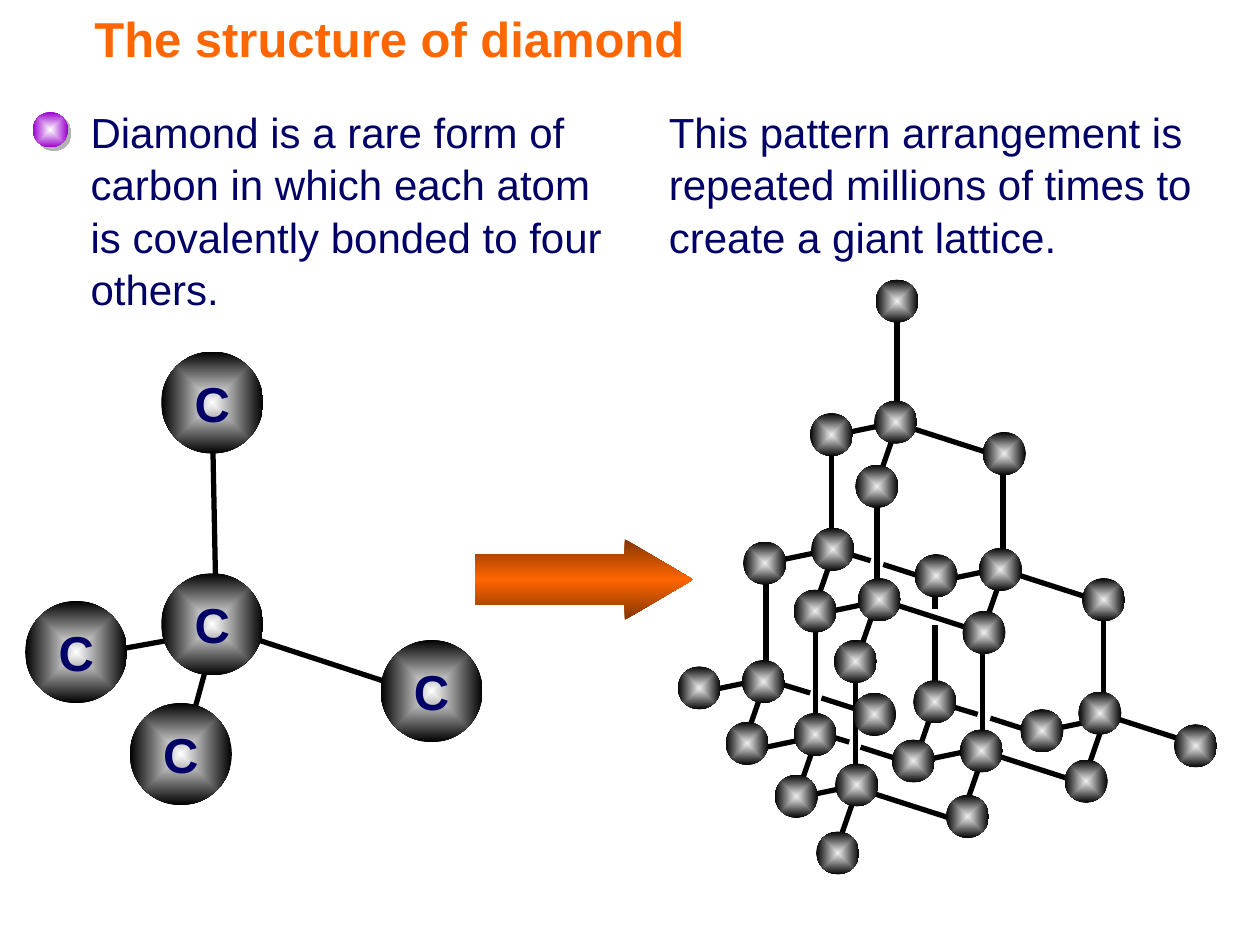
from lxml import etree
from pptx import Presentation
from pptx import util as u
from pptx.dml.color import RGBColor
from pptx.enum import shapes, text
from pptx.oxml.ns import qn

THEME = {
    "font": "Arial", "title_size": 28, "body_size": 24, "atom_size": 28,
    "title": "FF6600", "body": "010066", "bond": "000000", "shadow": "B2B2B2",
    "bullet_fill": ("FFFFFF", "9900CC"),
    "atom_fill": ("FFFFFF", "000000"),
    "lattice_fill": ("EFEFEF", "000000"),
    "arrow_fill": ("823400", "FF6600", "823400"),
}

# Content: wording as (text, box)
TITLE = ("The structure of diamond", (0, 0, 7.13, 0.6))
BODY = [
    ("Diamond is a rare form of carbon in which each atom is covalently "
     "bonded to four others.", (0.62, 0.78, 4.38, 1.7)),
    ("This pattern arrangement is repeated millions of times to create a "
     "giant lattice.", (5.21, 0.78, 4.79, 1.3)),
]

# Single unit: bonds as (start, end), atoms as (left, top)
UNIT_ATOM, UNIT_SYMBOL = 0.81, "C"
UNIT_BONDS = [((1.69, 3.56), (1.71, 4.57)), ((2.02, 5.07), (3.09, 5.42)),
              ((1.35, 5.08), (0.96, 5.15)), ((1.63, 5.32), (1.54, 5.65))]
UNIT_ATOMS = [(1.28, 2.79), (1.03, 5.58), (0.2, 4.77), (1.28, 4.55), (3.02, 5.08)]

# Lattice: each bond direction is (dx, dy) with the start points that share it
LATTICE_ATOM, LATTICE_TILT = 0.34, 358.9
LATTICE_BONDS = [
    ((0, 0.66), [(7.12, 2.55), (6.6, 3.6), (7.96, 3.76), (6.96, 4.02), (6.08, 4.62),
                 (6.47, 5.02), (6.79, 5.42), (7.8, 5.17), (8.76, 4.92)]),
    ((0.24, -0.05), [(6.74, 3.43), (6.22, 4.44), (6.6, 4.85), (5.68, 5.47), (7.4, 6.02),
                     (8.39, 5.78), (6.43, 6.31), (6.08, 5.93), (7.56, 4.59)]),
    ((0.08, -0.23), [(7, 3.72), (6.5, 4.72), (7.84, 4.89), (5.95, 5.77), (6.36, 6.21),
                     (6.68, 6.62), (7.69, 6.32), (8.65, 6.05), (7.3, 5.93), (6.84, 5.12)]),
    ((0.59, 0.19), [(7.24, 3.4), (8.07, 4.56), (7.11, 4.8), (6.94, 6.3), (7.92, 6),
                    (8.85, 5.7)]),
    # Bonds that pass behind another are drawn in two pieces
    ((0.23, 0.07), [(6.2, 5.43), (6.68, 4.38), (7.53, 5.6), (6.51, 5.82)]),
    ((0.28, 0.09), [(6.52, 5.54), (7.01, 4.48), (7.86, 5.7), (6.83, 5.93)]),
    ((0, 0.14), [(7.42, 4.69)]),
    ((0, 0.47), [(7.42, 4.96)]),
]
LATTICE_ATOMS = [
    (6.95, 2.22), (5.9, 4.3), (6.44, 4.19), (6.79, 3.69), (6.43, 3.28), (7.26, 4.4),
    (7.8, 3.43), (6.94, 3.18), (7.77, 4.35), (8.59, 4.59), (8.45, 6.03), (8.56, 5.49),
    (9.32, 5.75), (6.81, 4.59), (6.3, 4.68), (5.38, 5.29), (5.89, 5.24), (6.15, 6.15),
    (6.63, 6.06), (7.25, 5.4), (7.08, 5.87), (7.51, 6.31), (8.1, 5.63), (6.62, 5.08),
    (5.76, 5.73), (6.3, 5.66), (6.77, 5.5), (7.62, 5.79), (7.64, 4.85), (6.48, 6.6),
]


def inches(values):
    return [u.Inches(v) for v in values]


def write(frame, words, *, size, color, bold=False, wrap=True, inset=0.1,
          align=text.PP_ALIGN.LEFT, anchor=text.MSO_ANCHOR.TOP, spacing=1.0):
    frame.word_wrap = wrap
    frame.margin_left = u.Inches(inset)
    frame.vertical_anchor = anchor
    paragraph = frame.paragraphs[0]
    paragraph.alignment = align
    paragraph.line_spacing = spacing
    run = paragraph.add_run()
    run.text = words
    run.font.name, run.font.size, run.font.bold = THEME["font"], u.Pt(size), bold
    run.font.color.rgb = RGBColor.from_string(color)


def add_color(parent, color):
    etree.SubElement(parent, qn("a:srgbClr"), val=color)


def shade(shape, colors, from_centre=True):
    """Fill a shape with evenly spaced gradient stops."""
    shape.fill.background()
    gradient = etree.Element(qn("a:gradFill"), rotWithShape="1")
    stops = etree.SubElement(gradient, qn("a:gsLst"))
    for i, color in enumerate(colors):
        position = str(100000 * i // (len(colors) - 1))
        add_color(etree.SubElement(stops, qn("a:gs"), pos=position), color)
    if from_centre:
        path = etree.SubElement(gradient, qn("a:path"), path="shape")
        etree.SubElement(path, qn("a:fillToRect"),
                         {side: "50000" for side in "ltrb"})
    else:
        etree.SubElement(gradient, qn("a:lin"), ang="5400000", scaled="1")
    properties = shape._element.spPr
    properties.replace(properties.find(qn("a:noFill")), gradient)


def add_shaded(parent, kind, box, colors, from_centre=True):
    shape = parent.add_shape(kind, *inches(box))
    shape.shadow.inherit = False
    shape.line.fill.background()
    shade(shape, colors, from_centre)
    return shape


def add_ball(parent, corner, size, colors):
    return add_shaded(parent, shapes.MSO_SHAPE.OVAL, (*corner, size, size), colors)


def add_bond(parent, start, end):
    bond = parent.add_connector(shapes.MSO_CONNECTOR.STRAIGHT, *inches((*start, *end)))
    bond.line.color.rgb = RGBColor.from_string(THEME["bond"])
    bond.line.width = u.Pt(3)
    etree.SubElement(bond._element.spPr, qn("a:effectLst"))


def main():
    deck = Presentation()
    deck.slide_width, deck.slide_height = u.Inches(10), u.Inches(7.5)
    canvas = deck.slides.add_slide(deck.slide_layouts[6]).shapes

    # Title
    words, box = TITLE
    write(canvas.add_textbox(*inches(box)).text_frame, words, size=THEME["title_size"],
          color=THEME["title"], bold=True, inset=0.75, anchor=text.MSO_ANCHOR.MIDDLE)

    # Bullet ball with its shadow
    bullet = add_ball(canvas, (0.26, 0.89), 0.28, THEME["bullet_fill"])
    effects = bullet._element.spPr.find(qn("a:effectLst"))
    add_color(etree.SubElement(effects, qn("a:outerShdw"), dist=str(u.Pt(2.8)),
                               dir="2700000", algn="ctr", rotWithShape="0"),
              THEME["shadow"])

    # Body text
    for words, box in BODY:
        write(canvas.add_textbox(*inches(box)).text_frame, words,
              size=THEME["body_size"], color=THEME["body"], spacing=1.04)

    # Arrow from unit to lattice
    arrow = add_shaded(canvas, shapes.MSO_SHAPE.RIGHT_ARROW, (3.77, 4.28, 1.73, 0.64),
                       THEME["arrow_fill"], from_centre=False)
    arrow.adjustments[0], arrow.adjustments[1] = 0.628, 0.844

    # Single unit
    unit = canvas.add_group_shape().shapes
    for start, end in UNIT_BONDS:
        add_bond(unit, start, end)
    for corner in UNIT_ATOMS:
        atom = add_ball(unit, corner, UNIT_ATOM, THEME["atom_fill"])
        write(atom.text_frame, UNIT_SYMBOL, size=THEME["atom_size"], color=THEME["body"],
              bold=True, wrap=False, align=text.PP_ALIGN.CENTER,
              anchor=text.MSO_ANCHOR.MIDDLE)

    # Giant lattice
    lattice = canvas.add_group_shape().shapes
    for (dx, dy), starts in LATTICE_BONDS:
        for x, y in starts:
            add_bond(lattice, (x, y), (x + dx, y + dy))
    for corner in LATTICE_ATOMS:
        add_ball(lattice, corner, LATTICE_ATOM,
                 THEME["lattice_fill"]).rotation = LATTICE_TILT

    deck.save("out.pptx")


if __name__ == "__main__":
    main()
